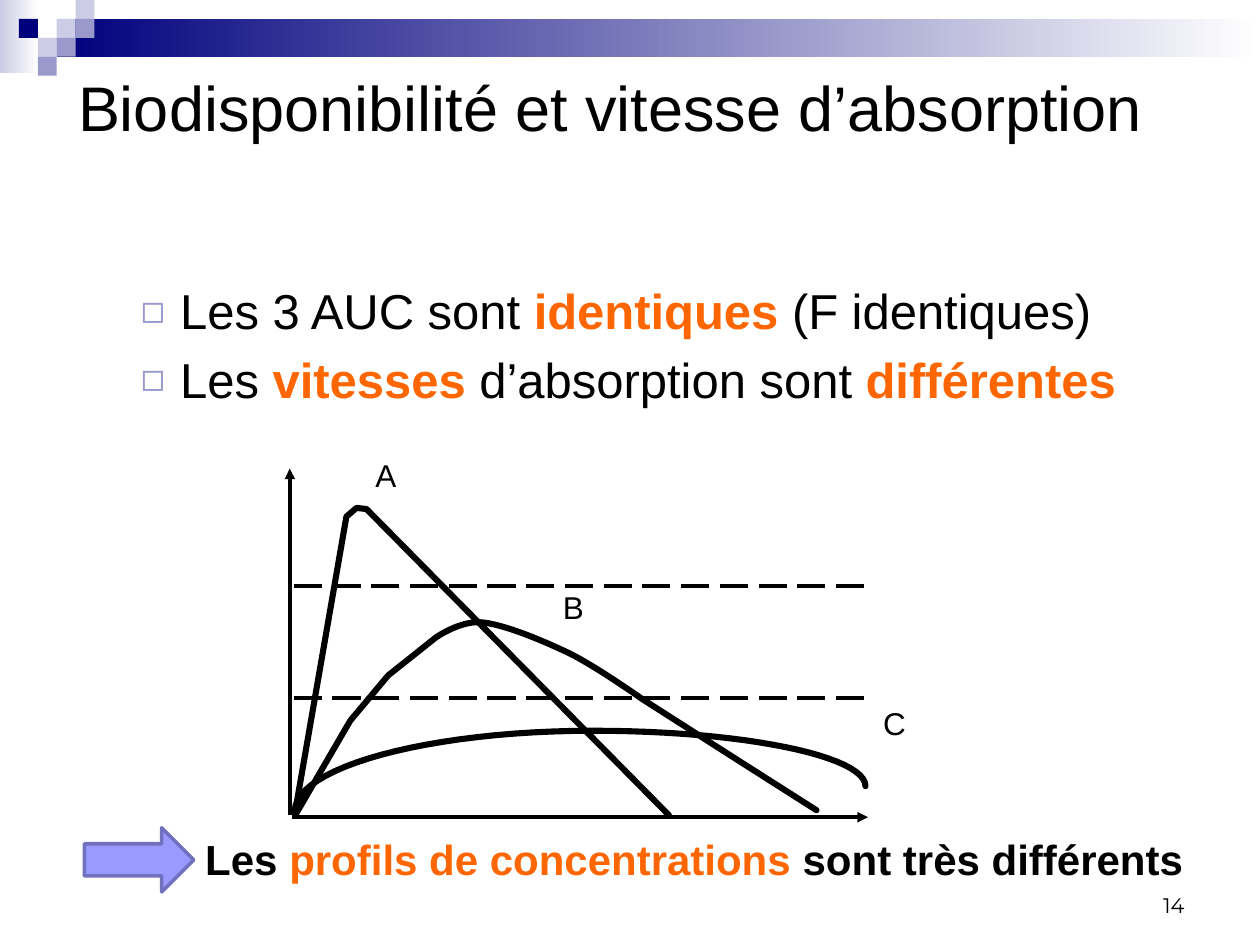
from lxml import etree
from pptx import Presentation
from pptx import util as u
from pptx.dml.color import RGBColor
from pptx.enum import dml, shapes, text
from pptx.oxml.ns import qn

Pt = u.Pt
COLORS = {"navy": "00007D", "pale": "CCCCE6", "mid": "9999CC", "white": "FFFFFF",
          "black": "000000", "accent": "FF6600", "arrow": "9999FF", "arrow_edge": "7171BD"}

TITLE = "Biodisponibilité et vitesse d’absorption"
# A run is (text, colour, bold)
BULLETS = [
    [("Les 3 AUC sont ", "black", False), ("identiques ", "accent", True),
     ("(F identiques)", "black", False)],
    [("Les", "black", False), (" vitesses ", "accent", True),
     ("d’absorption sont ", "black", False), ("différentes", "accent", True)],
]
CONCLUSION = [("Les ", "black", True), ("profils de concentrations ", "accent", True),
              ("sont très différents", "black", True)]
CURVE_LABELS = [("A", 207.4, 257), ("B", 314.6, 332.6), ("C", 497.5, 398.9)]

BANNER = [((0, 0, 22.3, 41.8), "pale"), ((32.4, 10.8, 687.6, 21.6), "navy")]
TILE = 10.8
TILES = [(3, 1, "pale"), (4, 0, "pale"), (4, 1, "mid"), (2, 2, "pale"),
         (1, 1, "navy"), (3, 2, "mid"), (2, 3, "mid")]  # column, row, colour

AXES = [((165.6, 466), (165.6, 267.8)), ((167, 467), (496, 467))]
THRESHOLDS = [((167.8, y), (494.6, y)) for y in (398.9, 334.8)]
# Two numbers are a straight step, six are a Bézier step
CURVES = {
    "C": [(168.5, 463.7), (168.5, 438.5, 244.8, 417.6, 339, 417.6),
          (424.8, 417.6, 494.6, 432, 494.6, 449.3)],
    "B": [(169.2, 465), (200.2, 411.8), (221.8, 386), (249.1, 364.3),
          (249.1, 364.3, 263.5, 354.2, 275.8, 355.7),
          (288.7, 357.1, 309.6, 365.8, 324.7, 373),
          (339.8, 380.2, 367.2, 399.6, 367.2, 399.6), (419, 432.7), (466.6, 463)],
    "A": [(168.5, 465), (198, 295.2), (203.8, 290.2), (209.5, 290.9), (382.3, 465.8)],
}


def rgb(name):
    return RGBColor.from_string(COLORS[name])


def add_rect(s, box, color, fade=False):
    sp = s.shapes.add_shape(shapes.MSO_SHAPE.RECTANGLE, *map(Pt, box))
    sp.shadow.inherit = False
    sp.line.fill.background()
    if fade:
        sp.fill.gradient()
        sp.fill.gradient_angle = 0
        for stop, name in zip(sp.fill.gradient_stops, (color, "white")):
            stop.color.rgb = rgb(name)
    else:
        sp.fill.solid()
        sp.fill.fore_color.rgb = rgb(color)


def add_runs(p, runs, size, font="Arial"):
    for words, color, bold in runs:
        r = p.add_run()
        r.text = words
        for key, value in {"name": font, "size": Pt(size), "bold": bold}.items():
            setattr(r.font, key, value)
        r.font.color.rgb = rgb(color)


def add_text(s, box, paragraphs, size, font="Arial", wrap=True):
    tf = s.shapes.add_textbox(*map(Pt, box)).text_frame
    tf.word_wrap = wrap
    for i, runs in enumerate(paragraphs):
        add_runs(tf.add_paragraph() if i else tf.paragraphs[0], runs, size, font)
    return tf


def add_bullet(p):
    pPr = p._p.get_or_add_pPr()
    pPr.set("marL", str(Pt(58.5)))
    pPr.set("indent", str(Pt(-22.5)))
    color = etree.SubElement(pPr, qn("a:buClr"))
    etree.SubElement(color, qn("a:srgbClr"), val=COLORS["mid"])
    etree.SubElement(pPr, qn("a:buSzPct"), val="80000")
    etree.SubElement(pPr, qn("a:buFont"), typeface="Arial")
    etree.SubElement(pPr, qn("a:buChar"), char="◻")


def add_line(s, start, end, arrow=False):
    ln = s.shapes.add_connector(shapes.MSO_CONNECTOR.STRAIGHT, *map(Pt, start + end))
    etree.SubElement(ln._element.spPr, qn("a:effectLst"))
    ln.line.color.rgb = rgb("black")
    ln.line.width = Pt(2)
    if arrow:
        etree.SubElement(ln.line._get_or_add_ln(), qn("a:tailEnd"), type="triangle")
    else:
        ln.line.dash_style = dml.MSO_LINE.LONG_DASH


def flatten(steps, n=24):
    """Turn straight and Bézier steps into one list of points."""
    points = [steps[0]]
    for step in steps[1:]:
        if len(step) == 2:
            points.append(step)
            continue
        nodes = [points[-1], step[:2], step[2:4], step[4:]]
        for t in (i / n for i in range(1, n + 1)):
            weights = ((1 - t) ** 3, 3 * t * (1 - t) ** 2, 3 * t * t * (1 - t), t ** 3)
            points.append(tuple(sum(w * q[k] for w, q in zip(weights, nodes))
                                for k in (0, 1)))
    return points


def add_curve(s, steps):
    points = [(Pt(x), Pt(y)) for x, y in flatten(steps)]
    builder = s.shapes.build_freeform(*points[0])
    builder.add_line_segments(points[1:], close=False)
    sp = builder.convert_to_shape()
    sp.shadow.inherit = False
    sp.fill.background()
    sp.line.color.rgb = rgb("black")
    sp.line.width = Pt(3.5)
    ln = sp.line._get_or_add_ln()
    ln.set("cap", "rnd")
    etree.SubElement(ln, qn("a:round"))


def main():
    prs = Presentation()
    prs.slide_width, prs.slide_height = Pt(720), Pt(540)
    s = prs.slides.add_slide(prs.slide_layouts[5])

    for box, color in BANNER:
        add_rect(s, box, color, fade=True)
    for col, row, color in TILES:
        add_rect(s, (col * TILE, row * TILE, TILE, TILE), color)

    title = s.shapes.title
    title.left, title.top, title.width, title.height = map(Pt, (37.4, 43.2, 640, 35.3))
    tf = title.text_frame
    tf.auto_size = text.MSO_AUTO_SIZE.NONE
    tf.vertical_anchor = text.MSO_ANCHOR.MIDDLE
    tf.paragraphs[0].alignment = text.PP_ALIGN.LEFT
    add_runs(tf.paragraphs[0], [(TITLE, "black", False)], 36)

    for p in add_text(s, (37.4, 157, 645, 82.8), BULLETS, 28).paragraphs:
        p.space_before = Pt(5.6)
        add_bullet(p)

    for start, end in AXES:
        add_line(s, start, end, arrow=True)
    for start, end in THRESHOLDS:
        add_line(s, start, end)
    for steps in CURVES.values():
        add_curve(s, steps)
    for label, x, y in CURVE_LABELS:
        add_text(s, (x, y, 51, 30.2), [[(label, "black", False)]], 18)

    arrow = s.shapes.add_shape(shapes.MSO_SHAPE.RIGHT_ARROW, *map(Pt, (48.2, 473, 62.6, 36.7)))
    arrow.shadow.inherit = False
    arrow.fill.solid()
    arrow.fill.fore_color.rgb = rgb("arrow")
    arrow.line.color.rgb = rgb("arrow_edge")
    arrow.line.width = Pt(2)
    add_text(s, (110.2, 473, 578.2, 36.7), [CONCLUSION], 24, wrap=False)

    number = add_text(s, (516.2, 491.8, 167.8, 36), [[("14", "black", False)]], 12, "Montserrat")
    number.vertical_anchor = text.MSO_ANCHOR.BOTTOM
    number.paragraphs[0].alignment = text.PP_ALIGN.RIGHT

    prs.save("out.pptx")


if __name__ == "__main__":
    main()
